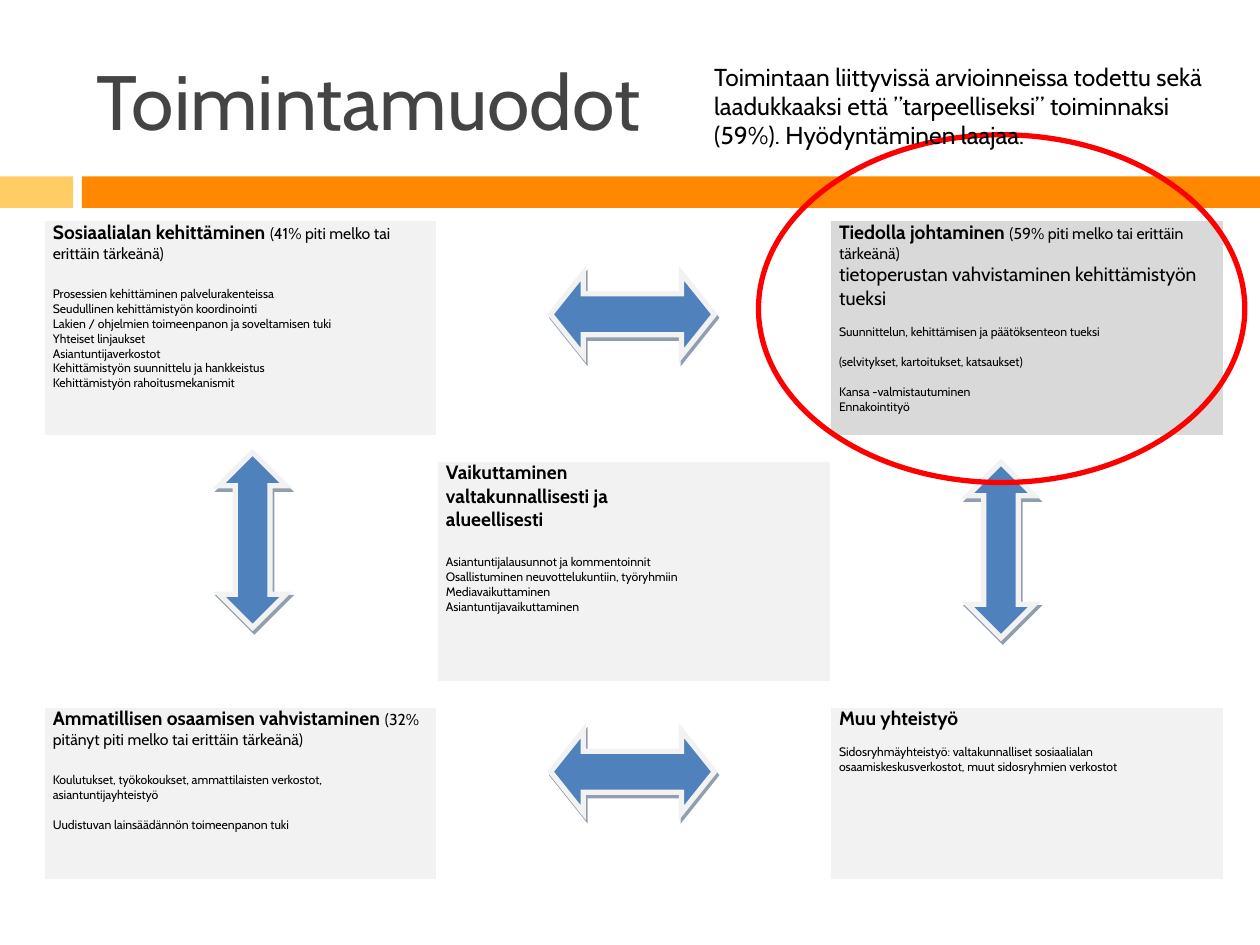
"""Build the slide on forms of activity: a table of five themes joined by arrows."""
from dataclasses import dataclass

import pptx
import pptx.dml.color
import pptx.enum.shapes
import pptx.enum.text
import pptx.oxml
import pptx.oxml.ns
import pptx.util
from lxml import etree

Inches = pptx.util.Inches
Pt = pptx.util.Pt
RGBColor = pptx.dml.color.RGBColor
Shape = pptx.enum.shapes.MSO_SHAPE
Anchor = pptx.enum.text.MSO_ANCHOR
qn = pptx.oxml.ns.qn

FONT = "Cabin"
BLACK = RGBColor(0x00, 0x00, 0x00)
CHARCOAL = RGBColor(0x44, 0x44, 0x44)
YELLOW = RGBColor(0xFF, 0xCC, 0x66)
ORANGE = RGBColor(0xFF, 0x88, 0x00)
RED = RGBColor(0xFF, 0x00, 0x00)
BLUE = RGBColor(0x4F, 0x81, 0xBD)
LIGHT = RGBColor(0xF2, 0xF2, 0xF2)
GREY = RGBColor(0xD9, 0xD9, 0xD9)

HEADING, NOTE, DETAIL = 11, 9, 7
HEADING_GAP, DETAIL_GAP = 13.4, 8.5
COLUMN_WIDTH = 3.12
ROW_HEIGHTS = (1.71, 0.2, 1.75, 0.2, 1.37)
NAMESPACE = 'xmlns:a="http://schemas.openxmlformats.org/drawingml/2006/main"'
BORDER = (
    f'<a:{{side}} {NAMESPACE} w="12700"><a:solidFill><a:srgbClr val="FFFFFF"/>'
    f'</a:solidFill></a:{{side}}>'
)
ARROW_SHADOW = (
    f'<a:effectLst {NAMESPACE}><a:outerShdw dist="28400" dir="3780000" algn="ctr" rotWithShape="0">'
    '<a:srgbClr val="243F60"><a:alpha val="50000"/></a:srgbClr></a:outerShdw></a:effectLst>'
)


@dataclass(frozen=True)
class Line:
    text: str
    size: float = DETAIL
    bold: bool = False
    gap: float = 0
    note: str = ""


@dataclass(frozen=True)
class Theme:
    row: int
    column: int
    lines: tuple[Line, ...]
    fill: RGBColor = LIGHT


@dataclass(frozen=True)
class Arrow:
    kind: Shape
    left: float
    top: float
    width: float
    height: float
    head: float


def details(gap: float, *texts: str) -> tuple[Line, ...]:
    """Return small lines, the first one set off by a gap."""
    return tuple(Line(text, gap=0 if index else gap) for index, text in enumerate(texts))


THEMES = (
    Theme(0, 0, (
        Line("Sosiaalialan kehittäminen ", HEADING, True, note="(41% piti melko tai erittäin tärkeänä)"),
        *details(
            HEADING_GAP,
            "Prosessien kehittäminen palvelurakenteissa",
            "Seudullinen kehittämistyön koordinointi",
            "Lakien / ohjelmien toimeenpanon ja soveltamisen tuki",
            "Yhteiset linjaukset",
            "Asiantuntijaverkostot",
            "Kehittämistyön suunnittelu ja hankkeistus",
            "Kehittämistyön rahoitusmekanismit",
        ),
    )),
    Theme(0, 2, (
        Line("Tiedolla johtaminen ", HEADING, True, note="(59% piti melko tai erittäin tärkeänä)"),
        Line("tietoperustan vahvistaminen kehittämistyön tueksi", HEADING),
        Line("Suunnittelun, kehittämisen ja päätöksenteon tueksi", gap=DETAIL_GAP),
        Line("(selvitykset, kartoitukset, katsaukset)", gap=DETAIL_GAP),
        *details(DETAIL_GAP, "Kansa -valmistautuminen", "Ennakointityö"),
    ), GREY),
    Theme(2, 1, (
        Line("Vaikuttaminen", HEADING, True),
        Line("valtakunnallisesti ja", HEADING, True),
        Line("alueellisesti", HEADING, True),
        *details(
            HEADING_GAP,
            "Asiantuntijalausunnot ja kommentoinnit",
            "Osallistuminen neuvottelukuntiin, työryhmiin",
            "Mediavaikuttaminen",
            "Asiantuntijavaikuttaminen",
        ),
    )),
    Theme(4, 0, (
        Line("Ammatillisen osaamisen vahvistaminen ", HEADING, True,
             note="(32% pitänyt piti melko tai erittäin tärkeänä)"),
        Line("Koulutukset, työkokoukset, ammattilaisten verkostot, asiantuntijayhteistyö", gap=HEADING_GAP),
        Line("Uudistuvan lainsäädännön toimeenpanon tuki", gap=DETAIL_GAP),
    )),
    Theme(4, 2, (
        Line("Muu yhteistyö", HEADING, True),
        Line("Sidosryhmäyhteistyö: valtakunnalliset sosiaalialan osaamiskeskusverkostot, "
             "muut sidosryhmien verkostot", gap=DETAIL_GAP),
    )),
)
ARROWS = (
    Arrow(Shape.LEFT_RIGHT_ARROW, 4.37, 5.8, 1.3, 0.65, 0.4),
    Arrow(Shape.LEFT_RIGHT_ARROW, 4.37, 2.17, 1.3, 0.65, 0.4),
    Arrow(Shape.UP_DOWN_ARROW, 1.74, 3.59, 0.53, 1.39, 0.52),
    Arrow(Shape.UP_DOWN_ARROW, 7.68, 3.67, 0.53, 1.39, 0.52),
)


def add_bar(page, left: float, width: float, color: RGBColor) -> None:
    """Draw one part of the band under the title."""
    bar = page.shapes.add_shape(Shape.RECTANGLE, Inches(left), Inches(1.4), Inches(width), Inches(0.25))
    bar.shadow.inherit = False
    bar.fill.solid()
    bar.fill.fore_color.rgb = color
    bar.line.fill.background()


def style_font(font, size: float, color: RGBColor = BLACK) -> None:
    """Set typeface, size and colour."""
    font.name = FONT
    font.size = Pt(size)
    font.color.rgb = color


def add_text(page, text: str, place: tuple[float, ...], size: float, color: RGBColor, anchor: Anchor) -> None:
    """Add a wrapped text box holding one paragraph."""
    frame = page.shapes.add_textbox(*map(Inches, place)).text_frame
    frame.word_wrap = True
    frame.vertical_anchor = anchor
    frame.text = text
    style_font(frame.paragraphs[0].font, size, color)


def write_line(paragraph, line: Line) -> None:
    """Fill a paragraph with a line and its optional note."""
    if line.gap:
        paragraph.space_before = Pt(line.gap)
    style_font(paragraph.font, line.size)
    span = paragraph.add_run()
    span.text = line.text
    span.font.bold = line.bold
    if line.note:
        note = paragraph.add_run()
        note.text = line.note
        note.font.size = Pt(NOTE)
        note.font.bold = False


def add_theme_table(page) -> None:
    """Lay out the themes in a grid with narrow spacer rows."""
    frame = page.shapes.add_table(
        len(ROW_HEIGHTS), 3, Inches(0.35), Inches(1.75), Inches(3 * COLUMN_WIDTH), Inches(sum(ROW_HEIGHTS)))
    table = frame.table
    table.first_row = table.horz_banding = False
    for column in table.columns:
        column.width = Inches(COLUMN_WIDTH)
    for row, height in zip(table.rows, ROW_HEIGHTS):
        row.height = Inches(height)
    themes = {(theme.row, theme.column): theme for theme in THEMES}
    for index, cell in enumerate(table.iter_cells()):
        cell.margin_left = cell.margin_right = Inches(0.07)
        cell.margin_top = cell.margin_bottom = 0
        properties = cell._tc.get_or_add_tcPr()
        for side in ("lnL", "lnR", "lnT", "lnB"):
            properties.append(pptx.oxml.parse_xml(BORDER.format(side=side)))
        paragraph = cell.text_frame.paragraphs[0]
        theme = themes.get(divmod(index, 3))
        if theme is None:
            cell.fill.background()
            etree.SubElement(paragraph._p, qn("a:endParaRPr"), sz="700")
            continue
        cell.fill.solid()
        cell.fill.fore_color.rgb = theme.fill
        write_line(paragraph, theme.lines[0])
        for line in theme.lines[1:]:
            write_line(cell.text_frame.add_paragraph(), line)


def add_arrow(page, arrow: Arrow) -> None:
    """Draw a double-headed block arrow with a hard shadow."""
    shape = page.shapes.add_shape(
        arrow.kind, *map(Inches, (arrow.left, arrow.top, arrow.width, arrow.height)))
    shape.adjustments[0] = 0.5
    shape.adjustments[1] = arrow.head
    shape.fill.solid()
    shape.fill.fore_color.rgb = BLUE
    shape.line.color.rgb = LIGHT
    shape.line.width = Pt(3)
    etree.SubElement(shape.line._get_or_add_ln(), qn("a:miter"), lim="800000")
    shape._element.spPr.append(pptx.oxml.parse_xml(ARROW_SHADOW))


def add_highlight(page) -> None:
    """Circle the theme that was rated most important."""
    ring = page.shapes.add_shape(Shape.OVAL, Inches(6.02), Inches(1.07), Inches(3.86), Inches(2.76))
    ring.shadow.inherit = False
    ring.fill.background()
    ring.line.color.rgb = RED
    ring.line.width = Pt(3)


def main() -> None:
    """Build and save the deck."""
    deck = pptx.Presentation()
    deck.slide_width, deck.slide_height = Inches(10), Inches(7.5)
    page = deck.slides.add_slide(deck.slide_layouts[6])
    add_bar(page, 0, 0.58, YELLOW)
    add_bar(page, 0.65, 9.35, ORANGE)
    add_text(page, "Toimintamuodot", (0.67, 0.25, 8.92, 1.08), 44, CHARCOAL, Anchor.MIDDLE)
    add_theme_table(page)
    for arrow in ARROWS:
        add_arrow(page, arrow)
    add_highlight(page)
    add_text(page, "Toimintaan liittyvissä arvioinneissa todettu sekä laadukkaaksi että ”tarpeelliseksi” "
             "toiminnaksi (59%). Hyödyntäminen laajaa.", (5.57, 0.44, 4.21, 0.81), 14, BLACK, Anchor.TOP)
    deck.save("out.pptx")


if __name__ == "__main__":
    main()
